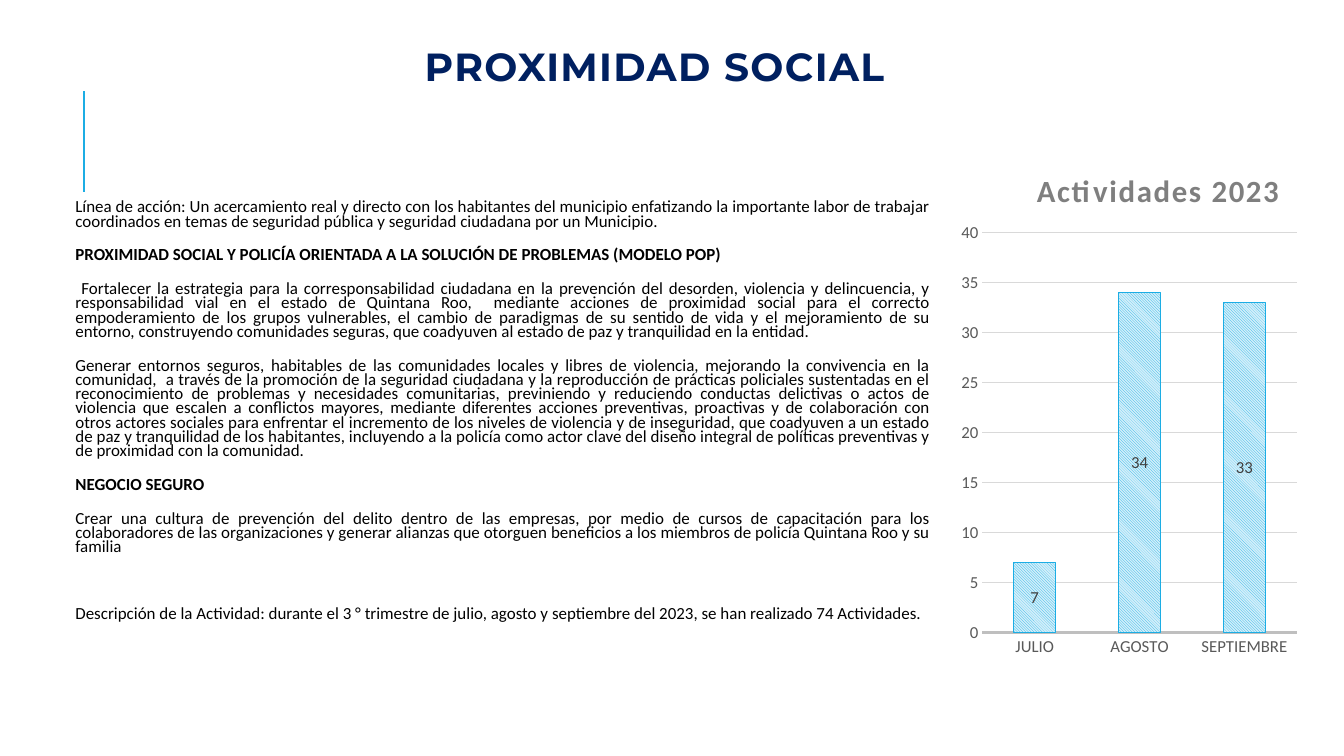
from dataclasses import dataclass

from lxml import etree
from pptx import Presentation
from pptx.chart.data import CategoryChartData
from pptx.dml.color import RGBColor
from pptx.enum.chart import XL_CHART_TYPE, XL_LABEL_POSITION, XL_TICK_MARK
from pptx.enum.dml import MSO_PATTERN
from pptx.enum.shapes import MSO_CONNECTOR
from pptx.enum.text import MSO_ANCHOR, PP_ALIGN
from pptx.oxml.ns import qn
from pptx.util import Cm, Pt

STACKED = XL_CHART_TYPE.COLUMN_STACKED
LABEL_CENTER = XL_LABEL_POSITION.CENTER
NO_TICK = XL_TICK_MARK.NONE
DIAGONAL = MSO_PATTERN.LIGHT_DOWNWARD_DIAGONAL
STRAIGHT = MSO_CONNECTOR.STRAIGHT
TOP, MIDDLE = MSO_ANCHOR.TOP, MSO_ANCHOR.MIDDLE
CENTER, JUSTIFY = PP_ALIGN.CENTER, PP_ALIGN.JUSTIFY


@dataclass(frozen=True)
class Theme:
    title_font: str = "Montserrat"
    body_font: str = "Calibri"
    navy: str = "002060"
    black: str = "000000"
    accent: str = "1CADE4"
    pale: str = "D2EFFA"
    chart_title: str = "7F7F7F"
    axis_text: str = "595959"
    label_text: str = "404040"
    axis_line: str = "BFBFBF"
    grid: str = "D9D9D9"
    title_size: float = 28
    body_size: float = 12.1
    chart_title_size: float = 22
    chart_size: float = 12


# Each entry: text, bold, space before in points
PARAGRAPHS = [
    ("Línea de acción: Un acercamiento real y directo con los habitantes del municipio "
     "enfatizando la importante labor de trabajar coordinados en temas de seguridad pública "
     "y seguridad ciudadana por un Municipio.", False, 12),
    ("PROXIMIDAD SOCIAL Y POLICÍA ORIENTADA A LA SOLUCIÓN DE PROBLEMAS (MODELO POP)", True, 12),
    (" Fortalecer la estrategia para la corresponsabilidad ciudadana en la prevención del "
     "desorden, violencia y delincuencia, y responsabilidad vial en el estado de Quintana Roo,  "
     "mediante acciones de proximidad social para el correcto empoderamiento de los grupos "
     "vulnerables, el cambio de paradigmas de su sentido de vida y el mejoramiento de su "
     "entorno, construyendo comunidades seguras, que coadyuven al estado de paz y tranquilidad "
     "en la entidad.", False, 12),
    ("Generar entornos seguros, habitables de las comunidades locales y libres de violencia, "
     "mejorando la convivencia en la comunidad,  a través de la promoción de la seguridad "
     "ciudadana y la reproducción de prácticas policiales sustentadas en el reconocimiento de "
     "problemas y necesidades comunitarias, previniendo y reduciendo conductas delictivas o "
     "actos de violencia que escalen a conflictos mayores, mediante diferentes acciones "
     "preventivas, proactivas y de colaboración con otros actores sociales para enfrentar el "
     "incremento de los niveles de violencia y de inseguridad, que coadyuven a un estado de paz "
     "y tranquilidad de los habitantes, incluyendo a la policía como actor clave del diseño "
     "integral de políticas preventivas y de proximidad con la comunidad.", False, 12),
    ("NEGOCIO SEGURO", True, 12),
    ("Crear una cultura de prevención del delito dentro de las empresas, por medio de cursos de "
     "capacitación para los colaboradores de las organizaciones y generar alianzas que otorguen "
     "beneficios a los miembros de policía Quintana Roo y su familia", False, 12),
    ("Descripción de la Actividad: durante el 3 ° trimestre de julio, agosto y septiembre del "
     "2023, se han realizado 74 Actividades.", False, 36),
]
ACTIVITIES = {"JULIO": 7, "AGOSTO": 34, "SEPTIEMBRE": 33}


def set_layout(element, index, inner=False, **fractions):
    """Fix a chart part at fractions of the chart area."""
    for old in element.findall(qn("c:layout")):
        element.remove(old)
    layout = etree.Element(qn("c:layout"))
    manual = etree.SubElement(layout, qn("c:manualLayout"))
    if inner:
        etree.SubElement(manual, qn("c:layoutTarget"), val="inner")
    for mode in ("xMode", "yMode"):
        etree.SubElement(manual, qn(f"c:{mode}"), val="edge")
    for name, value in fractions.items():
        etree.SubElement(manual, qn(f"c:{name}"), val=str(value))
    element.insert(index, layout)


class SlideBuilder:
    def __init__(self, slide, theme):
        self.slide, self.theme = slide, theme

    def font(self, font, size, color, bold=False, name=None):
        font.name = name or self.theme.body_font
        font.size, font.bold = Pt(size), bold
        font.color.rgb = RGBColor.from_string(color)

    def line(self, line, color, width):
        line.color.rgb = RGBColor.from_string(color)
        line.width = Pt(width)

    def text_frame(self, box, insets, anchor):
        tf = self.slide.shapes.add_textbox(*map(Cm, box)).text_frame
        tf.word_wrap, tf.vertical_anchor = True, anchor
        tf.margin_left, tf.margin_top, tf.margin_right, tf.margin_bottom = map(Cm, insets)
        return tf

    def rule(self, x, top, bottom):
        s = self.slide.shapes.add_connector(STRAIGHT, Cm(x), Cm(bottom), Cm(x), Cm(top))
        self.line(s.line, self.theme.accent, 1.5)
        etree.SubElement(s._element.spPr, qn("a:effectLst"))

    def title(self, text, box):
        t = self.theme
        tf = self.text_frame(box, (0.25, 0.13, 0.25, 1.1), MIDDLE)
        p = tf.paragraphs[0]
        p.text, p.alignment, p.line_spacing = text, CENTER, 0.8
        r = p.runs[0]
        self.font(r.font, t.title_size, t.navy, True, t.title_font)
        r.font._element.set("spc", "100")

    def body(self, paragraphs, box):
        tf = self.text_frame(box, (0.38, 0.13, 0.13, 0.13), TOP)
        for i, (text, bold, before) in enumerate(paragraphs):
            p = tf.add_paragraph() if i else tf.paragraphs[0]
            p.text, p.alignment, p.line_spacing = text, JUSTIFY, 0.7
            p.space_before, p.space_after = Pt(before), Pt(2)
            self.font(p.runs[0].font, self.theme.body_size, self.theme.black, bold)

    def column_chart(self, title, values, box):
        t = self.theme
        data = CategoryChartData()
        data.categories = list(values)
        data.add_series("Series 1", list(values.values()))
        chart = self.slide.shapes.add_chart(STACKED, *map(Cm, box), data).chart
        chart.has_legend = False
        self.font(chart.font, t.chart_size, t.axis_text)

        tf = chart.chart_title.text_frame
        tf.text = title
        r = tf.paragraphs[0].runs[0]
        self.font(r.font, t.chart_title_size, t.chart_title, True)
        r.font._element.set("spc", "130")
        set_layout(chart.chart_title._element, 1, x=0.22, y=0.03)

        plot = chart.plots[0]
        set_layout(plot._element.getparent(), 0, inner=True, x=0.08, y=0.163, w=0.9, h=0.772)
        plot.gap_width, plot.overlap, plot.vary_by_categories = 150, 100, False
        for axis in (chart.category_axis, chart.value_axis):
            axis.major_tick_mark = axis.minor_tick_mark = NO_TICK
            self.font(axis.tick_labels.font, t.chart_size, t.axis_text)
        self.line(chart.category_axis.format.line, t.axis_line, 1.5)
        scale = chart.value_axis
        scale.minimum_scale, scale.maximum_scale, scale.major_unit = 0, 40, 5
        scale.format.line.fill.background()
        self.line(scale.major_gridlines.format.line, t.grid, 0.75)

        series = plot.series[0]
        fill = series.format.fill
        fill.patterned()
        fill.pattern = DIAGONAL
        fill.fore_color.rgb = RGBColor.from_string(t.accent)
        fill.back_color.rgb = RGBColor.from_string(t.pale)
        self.line(series.format.line, t.accent, 0.75)
        labels = series.data_labels
        labels.show_value, labels.position = True, LABEL_CENTER
        self.font(labels.font, t.chart_size, t.label_text)


def main():
    prs = Presentation()
    prs.slide_width, prs.slide_height = Cm(33.87), Cm(19.05)
    builder = SlideBuilder(prs.slides.add_slide(prs.slide_layouts[6]), Theme())
    builder.rule(2.11, 2.29, 4.83)
    builder.title("PROXIMIDAD SOCIAL", (1.07, 0.76, 30.86, 2.97))
    builder.body(PARAGRAPHS, (1.52, 4.95, 22.05, 12.93))
    builder.column_chart("Actividades 2023", ACTIVITIES, (24.05, 3.73, 8.81, 13.06))
    prs.save("out.pptx")


if __name__ == "__main__":
    main()
